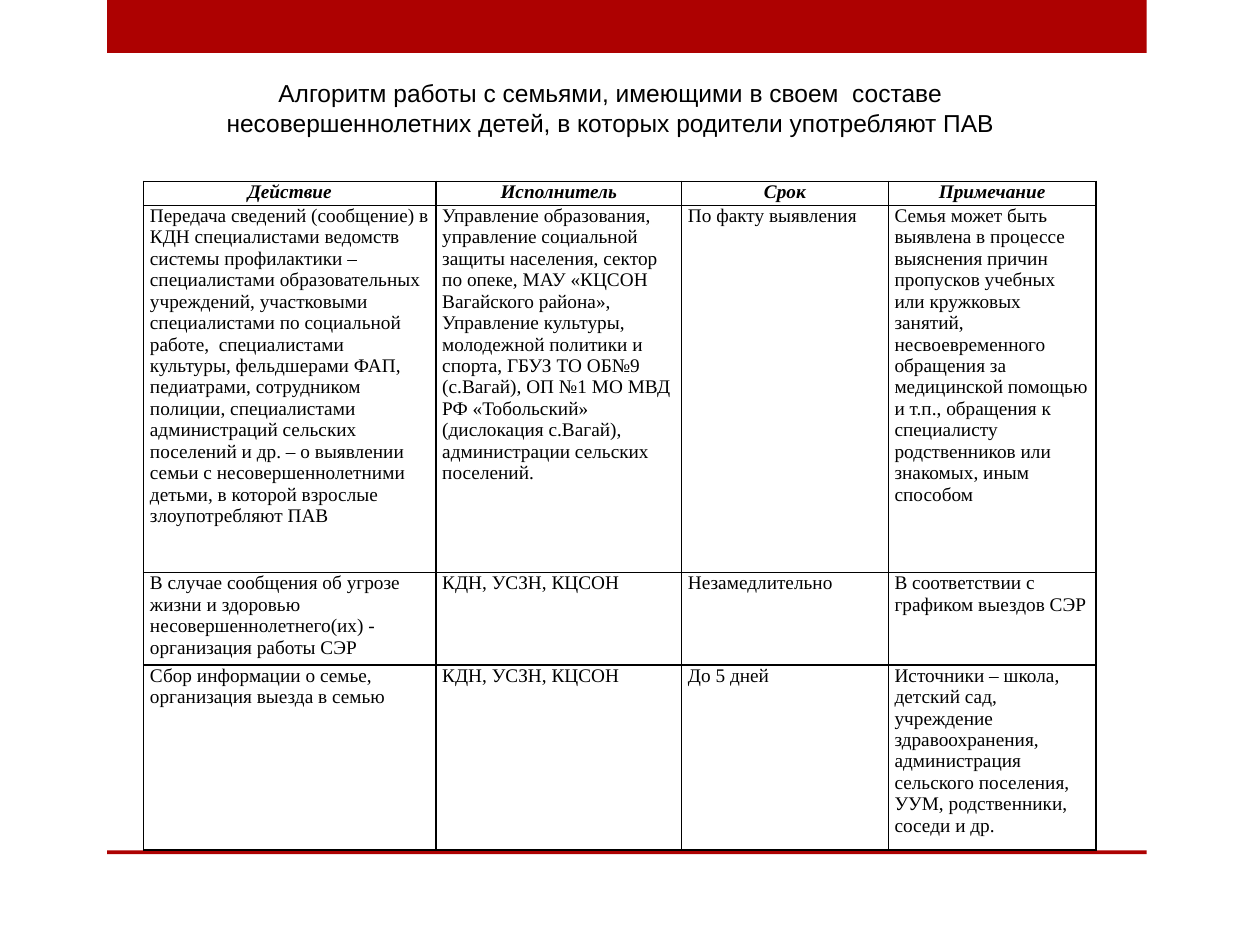
import lxml.etree
import pptx
import pptx.dml.color
import pptx.enum.shapes
import pptx.enum.text
import pptx.oxml.ns
import pptx.util
from pptx.util import Inches

RED = pptx.dml.color.RGBColor(0xAD, 0x01, 0x01)
BLACK = pptx.dml.color.RGBColor(0x00, 0x00, 0x00)
WHITE = pptx.dml.color.RGBColor(0xFF, 0xFF, 0xFF)

TITLE = ("Алгоритм работы с семьями, имеющими в своем  составе "
         "несовершеннолетних детей, в которых родители употребляют ПАВ")
COLUMN_WIDTHS = [2.32, 1.95, 1.64, 1.65]
ROW_HEIGHTS = [0.19, 2.92, 0.73, 1.47]
ROWS = [
    ["Действие", "Исполнитель", "Срок", "Примечание"],
    [
        "Передача сведений (сообщение) в КДН специалистами ведомств системы "
        "профилактики – специалистами образовательных учреждений, участковыми "
        "специалистами по социальной работе,  специалистами культуры, фельдшерами "
        "ФАП, педиатрами, сотрудником полиции, специалистами администраций сельских "
        "поселений и др. – о выявлении семьи с несовершеннолетними детьми, в которой "
        "взрослые злоупотребляют ПАВ",
        "Управление образования, управление социальной защиты населения, сектор по "
        "опеке, МАУ «КЦСОН Вагайского района», Управление культуры, молодежной "
        "политики и спорта, ГБУЗ ТО ОБ№9 (с.Вагай), ОП №1 МО МВД РФ «Тобольский» "
        "(дислокация с.Вагай), администрации сельских поселений.",
        "По факту выявления",
        "Семья может быть выявлена в процессе выяснения причин пропусков учебных или "
        "кружковых занятий, несвоевременного обращения за медицинской помощью и т.п., "
        "обращения к специалисту родственников или знакомых, иным способом",
    ],
    [
        "В случае сообщения об угрозе жизни и здоровью несовершеннолетнего(их) - "
        "организация работы СЭР",
        "КДН, УСЗН, КЦСОН",
        "Незамедлительно",
        "В соответствии с графиком выездов СЭР",
    ],
    [
        "Сбор информации о семье, организация выезда в семью",
        "КДН, УСЗН, КЦСОН",
        "До 5 дней",
        "Источники – школа, детский сад, учреждение здравоохранения, администрация "
        "сельского поселения, УУМ, родственники, соседи и др.",
    ],
]


def format_paragraph(paragraph, font_name, size, centered=False, emphasized=False):
    """Set the alignment of a paragraph and the font of its runs."""
    if centered:
        paragraph.alignment = pptx.enum.text.PP_ALIGN.CENTER
    for run in paragraph.runs:
        run.font.name = font_name
        run.font.size = pptx.util.Pt(size)
        run.font.color.rgb = BLACK
        run.font.bold = emphasized
        run.font.italic = emphasized


def add_band(slide, left, top, width, height):
    """Add a plain red band."""
    shape = slide.shapes.add_shape(
        pptx.enum.shapes.MSO_SHAPE.RECTANGLE, left, top, width, height)
    shape.shadow.inherit = False
    shape.fill.solid()
    shape.fill.fore_color.rgb = RED
    shape.line.fill.background()


def add_title(slide, left, top, width, height):
    """Add the centred title, raised above the middle of its box."""
    text_frame = slide.shapes.add_textbox(left, top, width, height).text_frame
    text_frame.word_wrap = True
    text_frame.vertical_anchor = pptx.enum.text.MSO_ANCHOR.MIDDLE
    text_frame.margin_bottom = Inches(0.34)
    text_frame.text = TITLE
    format_paragraph(text_frame.paragraphs[0], "Arial", 14, centered=True)


def add_borders(cell):
    """Draw a thin black line on all four sides of a cell."""
    properties = cell._tc.get_or_add_tcPr()
    qualified = pptx.oxml.ns.qn
    for position, side in enumerate(("a:lnL", "a:lnR", "a:lnT", "a:lnB")):
        line = lxml.etree.Element(qualified(side), w=str(pptx.util.Pt(1)))
        fill = lxml.etree.SubElement(line, qualified("a:solidFill"))
        lxml.etree.SubElement(fill, qualified("a:srgbClr"), val=str(BLACK))
        properties.insert(position, line)


def add_action_table(slide, left, top, width, height):
    """Add the table of actions, sharing out the box by column and row weights."""
    table = slide.shapes.add_table(
        len(ROWS), len(COLUMN_WIDTHS), left, top, width, height).table
    for column, weight in zip(table.columns, COLUMN_WIDTHS):
        column.width = int(width * weight / sum(COLUMN_WIDTHS))
    for row, weight in zip(table.rows, ROW_HEIGHTS):
        row.height = int(height * weight / sum(ROW_HEIGHTS))
    for row_index, texts in enumerate(ROWS):
        is_header = row_index == 0
        for column_index, text in enumerate(texts):
            cell = table.cell(row_index, column_index)
            cell.margin_left = cell.margin_right = Inches(0.05)
            cell.margin_top = cell.margin_bottom = 0
            cell.fill.solid()
            cell.fill.fore_color.rgb = WHITE
            add_borders(cell)
            cell.text_frame.text = text
            format_paragraph(cell.text_frame.paragraphs[0], "Times New Roman", 11,
                             centered=is_header, emphasized=is_header)


def main():
    """Build the slide and save it."""
    presentation = pptx.Presentation()
    presentation.slide_width = Inches(10)
    presentation.slide_height = Inches(7.5)
    slide = presentation.slides.add_slide(presentation.slide_layouts[6])
    add_band(slide, Inches(0.85), 0, Inches(8.25), Inches(0.42))
    add_band(slide, Inches(0.85), Inches(6.75), Inches(8.25), Inches(0.03))
    add_title(slide, Inches(1.54), Inches(0.56), Inches(6.61), Inches(0.88))
    add_action_table(slide, Inches(1.14), Inches(1.44), Inches(7.56), Inches(5.3))
    presentation.save("out.pptx")


if __name__ == "__main__":
    main()
